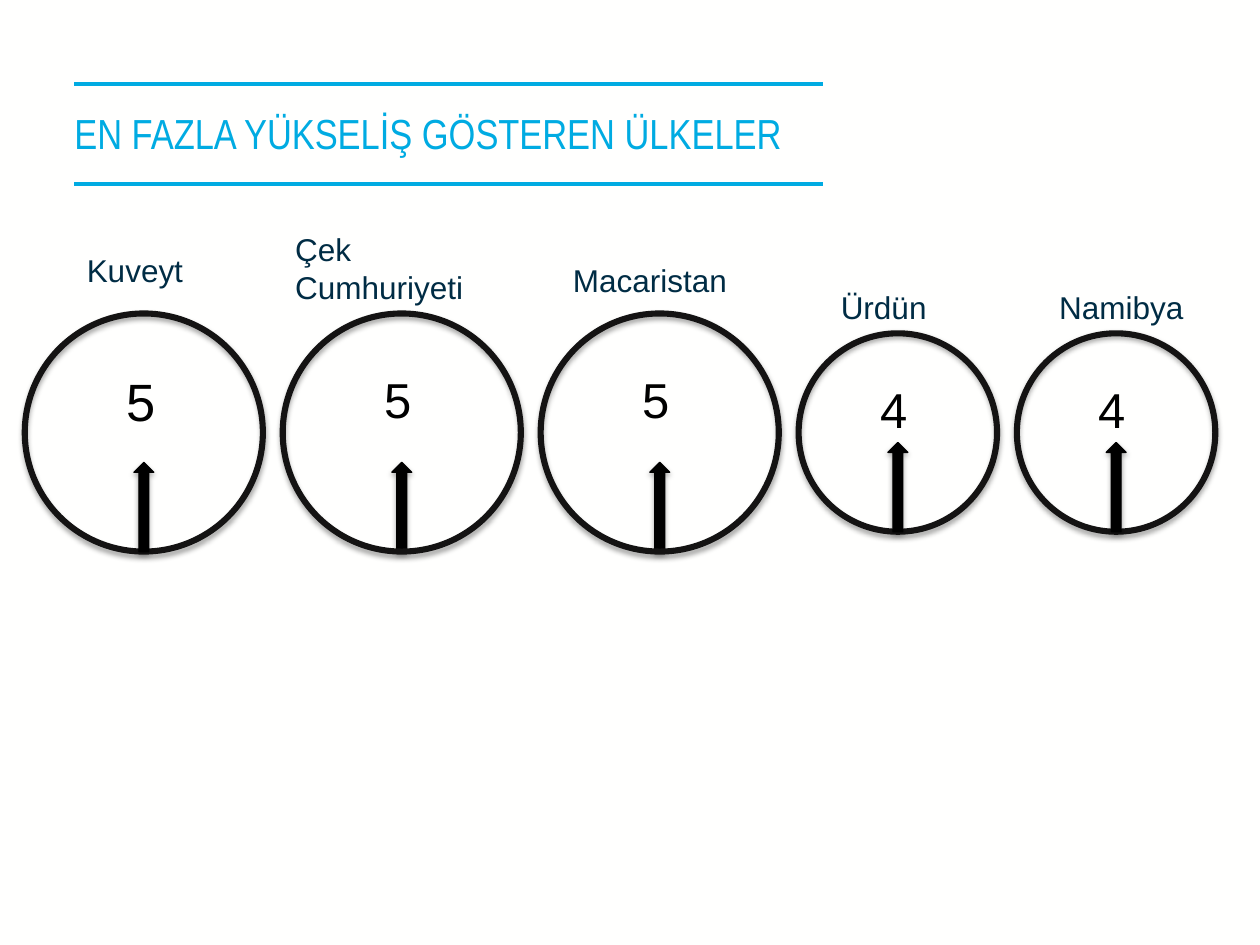
from dataclasses import dataclass

from lxml.etree import SubElement
from pptx import Presentation
from pptx.dml.color import RGBColor as Rgb
from pptx.enum.shapes import MSO_CONNECTOR as Link, MSO_SHAPE as Kind
from pptx.enum.text import MSO_ANCHOR as Anchor, MSO_AUTO_SIZE as Fit
from pptx.oxml.ns import qn
from pptx.util import Cm, Pt

COLORS = {"paper": "FFFFFE", "sky": "00ABE2", "navy": "002C44",
          "ring": "141313", "black": "000000"}
MID = 8.72  # shared height of the ring centres, cm
GAP = 0.4


@dataclass
class Land:
    name: str
    rise: str
    size: float  # ring diameter
    shift: float  # label left, from the ring's left
    top: float  # label top
    width: float
    height: float = 1.02
    points: int = 28
    front: bool = True  # arrow lies over the ring


LANDS = [
    Land("Kuveyt", "5", 4.8, 1, 4.93, 3, points=30),
    Land("Çek Cumhuriyeti", "5", 4.8, 0, 4.52, 4, height=1.8, front=False),
    Land("Macaristan", "5", 4.8, 0.4, 5.13, 3.8, front=False),
    Land("Ürdün", "4", 4, 0.6, 5.69, 3.4),
    Land("Namibya", "4", 4, 0.6, 5.69, 3.4),
]


def color(key: str) -> Rgb:
    return Rgb.from_string(COLORS[key])


def add_text(slide, words: str, box: tuple, size: int, ink: str,
             font: str = "Arial", wrap: bool = True):
    frame = slide.shapes.add_textbox(*map(Cm, box)).text_frame
    frame.word_wrap = wrap
    frame.auto_size = Fit.SHAPE_TO_FIT_TEXT
    run = frame.paragraphs[0].add_run()
    run.text = words
    run.font.name, run.font.size = font, Pt(size)
    run.font.color.rgb = color(ink)
    return frame


def add_shade(shape) -> None:
    """Give the shape a soft shadow that falls straight down."""
    shape.shadow.inherit = False
    effects = shape._element.spPr.find(qn("a:effectLst"))
    shade = SubElement(effects, qn("a:outerShdw"), blurRad=str(Pt(3.1)),
                       dist=str(Pt(1.8)), dir="5400000", rotWithShape="0")
    tint = SubElement(shade, qn("a:srgbClr"), val=COLORS["black"])
    SubElement(tint, qn("a:alpha"), val="35000")


def add_ring(slide, land: Land, left: float) -> None:
    ring = slide.shapes.add_shape(Kind.OVAL, Cm(left), Cm(MID - land.size / 2),
                                  Cm(land.size), Cm(land.size))
    ring.fill.background()
    ring.line.color.rgb = color("ring")
    ring.line.width = Pt(3.5)
    add_shade(ring)


def add_arrow(slide, land: Land, left: float) -> None:
    """Stand an upward arrow on the bottom of the ring."""
    wide, high = 0.4, 1.8
    arrow = slide.shapes.add_shape(
        Kind.DOWN_ARROW, Cm(left + (land.size - wide) / 2),
        Cm(MID + land.size / 2 - high), Cm(wide), Cm(high))
    arrow.rotation = 180
    arrow.fill.solid()
    arrow.fill.fore_color.rgb = color("black")
    arrow.line.color.rgb = color("black")
    arrow.line.width = Pt(0.75)
    add_shade(arrow)


def add_land(slide, land: Land, left: float) -> None:
    steps = (add_ring, add_arrow) if land.front else (add_arrow, add_ring)
    for step in steps:
        step(slide, land, left)
    add_text(slide, land.name,
             (left + land.shift, land.top, land.width, land.height), 18, "navy")
    spot = (left + land.size / 2 - 0.6, MID - land.size / 4 - 0.2, 1.06, 1.45)
    add_text(slide, land.rise, spot, land.points, "black", wrap=False)


def add_rule(slide, top: float) -> None:
    rule = slide.shapes.add_connector(Link.STRAIGHT, Cm(1.5), Cm(top),
                                      Cm(16.59), Cm(top))
    rule.line.color.rgb = color("sky")
    rule.line.width = Pt(2)
    SubElement(rule._element.spPr, qn("a:effectLst"))


def add_title(slide, words: str) -> None:
    frame = add_text(slide, words, (1.5, 1.58, 17.6, 2.2), 24, "sky",
                     "Arial Narrow")
    frame.auto_size = Fit.NONE
    frame.vertical_anchor = Anchor.MIDDLE
    frame.margin_left = frame.margin_right = 0
    frame.margin_top = frame.margin_bottom = 0


def main() -> None:
    deck = Presentation()
    deck.slide_width, deck.slide_height = Cm(25.4), Cm(19.05)
    slide = deck.slides.add_slide(deck.slide_layouts[6])
    slide.background.fill.solid()
    slide.background.fill.fore_color.rgb = color("paper")
    for top in (1.69, 3.71):
        add_rule(slide, top)
    add_title(slide, "EN FAZLA YÜKSELİŞ GÖSTEREN ÜLKELER")
    left = 0.5
    for land in LANDS:
        add_land(slide, land, left)
        left += land.size + GAP
    deck.save("out.pptx")


if __name__ == "__main__":
    main()
